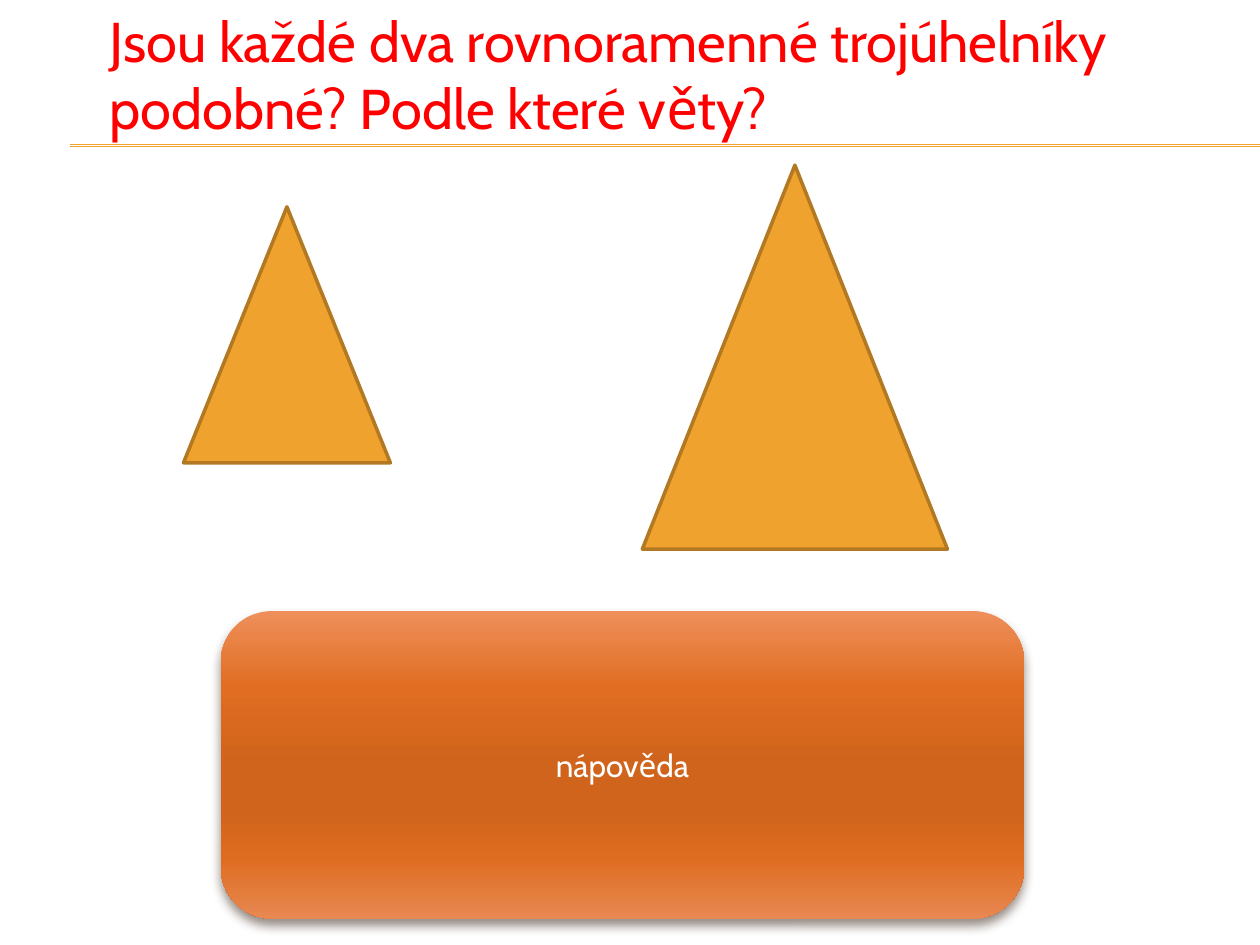
from lxml.etree import SubElement
from pptx import Presentation
from pptx.dml.color import RGBColor
from pptx.enum.shapes import MSO_CONNECTOR, MSO_SHAPE
from pptx.enum.text import MSO_ANCHOR, PP_ALIGN
from pptx.oxml.ns import qn
from pptx.util import Cm, Pt

FONT = "Cabin"
RED = RGBColor(0xFF, 0x00, 0x00)
WHITE = RGBColor(0xFF, 0xFF, 0xFF)
AMBER = RGBColor(0xF0, 0xA2, 0x2E)
DARK_AMBER = RGBColor(0xB2, 0x78, 0x22)
BROWN = RGBColor(0x4E, 0x3B, 0x30)
HINT_STOPS = [
    (0, RGBColor(0xEE, 0x8F, 0x5B)),
    (25, RGBColor(0xE0, 0x6D, 0x21)),
    (50, RGBColor(0xD0, 0x64, 0x1C)),
    (65, RGBColor(0xD0, 0x64, 0x1C)),
    (80, RGBColor(0xDE, 0x6C, 0x20)),
    (100, RGBColor(0xE8, 0x88, 0x52)),
]


def write_text(frame, text, *, size, color, align=PP_ALIGN.LEFT, anchor=MSO_ANCHOR.TOP):
    frame.word_wrap = True
    frame.vertical_anchor = anchor
    paragraph = frame.paragraphs[0]
    paragraph.alignment = align
    run = paragraph.add_run()
    run.text = text
    run.font.name = FONT
    run.font.size = Pt(size)
    run.font.color.rgb = color


def add_rule(slide, y):
    rule = slide.shapes.add_connector(
        MSO_CONNECTOR.STRAIGHT, Cm(1.42), Cm(y), Cm(25.4), Cm(y)
    )
    rule.line.color.rgb = AMBER
    rule.line.width = Pt(0.75)
    SubElement(rule._element.spPr, qn("a:effectLst"))


def add_question(slide, text):
    question = slide.shapes.add_textbox(Cm(1.96), Cm(0), Cm(21.9), Cm(2.9))
    write_text(question.text_frame, text, size=32, color=RED)


def add_triangle(slide, left, top, width, height):
    triangle = slide.shapes.add_shape(
        MSO_SHAPE.ISOSCELES_TRIANGLE, Cm(left), Cm(top), Cm(width), Cm(height)
    )
    triangle.shadow.inherit = False
    triangle.fill.solid()
    triangle.fill.fore_color.rgb = AMBER
    triangle.line.color.rgb = DARK_AMBER
    triangle.line.width = Pt(2)


def fill_gradient(shape, stops):
    shape.fill.gradient()
    shape.fill.gradient_angle = 270
    stop_list = shape._element.spPr.find(".//" + qn("a:gsLst"))
    stop_list.clear()
    for percent, color in stops:
        stop = SubElement(stop_list, qn("a:gs"), pos=str(percent * 1000))
        SubElement(stop, qn("a:srgbClr"), val=str(color))


def add_shadow(shape, color, *, alpha, blur, distance):
    shape.shadow.inherit = False
    effects = shape._element.spPr.find(qn("a:effectLst"))
    shadow = SubElement(
        effects,
        qn("a:outerShdw"),
        blurRad=str(Pt(blur)),
        dist=str(Pt(distance)),
        dir="5400000",
        rotWithShape="0",
    )
    tint = SubElement(shadow, qn("a:srgbClr"), val=str(color))
    SubElement(tint, qn("a:alpha"), val=str(alpha * 1000))


def add_hint(slide, text):
    hint = slide.shapes.add_shape(
        MSO_SHAPE.ROUNDED_RECTANGLE, Cm(4.45), Cm(12.32), Cm(16.2), Cm(6.2)
    )
    fill_gradient(hint, HINT_STOPS)
    hint.line.fill.background()
    add_shadow(hint, BROWN, alpha=60, blur=6, distance=4)
    write_text(
        hint.text_frame,
        text,
        size=18,
        color=WHITE,
        align=PP_ALIGN.CENTER,
        anchor=MSO_ANCHOR.MIDDLE,
    )


def main():
    presentation = Presentation()
    presentation.slide_width = Cm(25.4)
    presentation.slide_height = Cm(19.05)
    slide = presentation.slides.add_slide(presentation.slide_layouts[6])

    for y in (2.92, 2.95):
        add_rule(slide, y)
    add_question(
        slide, "Jsou každé dva rovnoramenné trojúhelníky podobné? Podle které věty?"
    )
    add_triangle(slide, 3.7, 4.17, 4.17, 5.16)
    add_triangle(slide, 12.95, 3.33, 6.15, 7.74)
    add_hint(slide, "nápověda")

    presentation.save("out.pptx")


if __name__ == "__main__":
    main()
